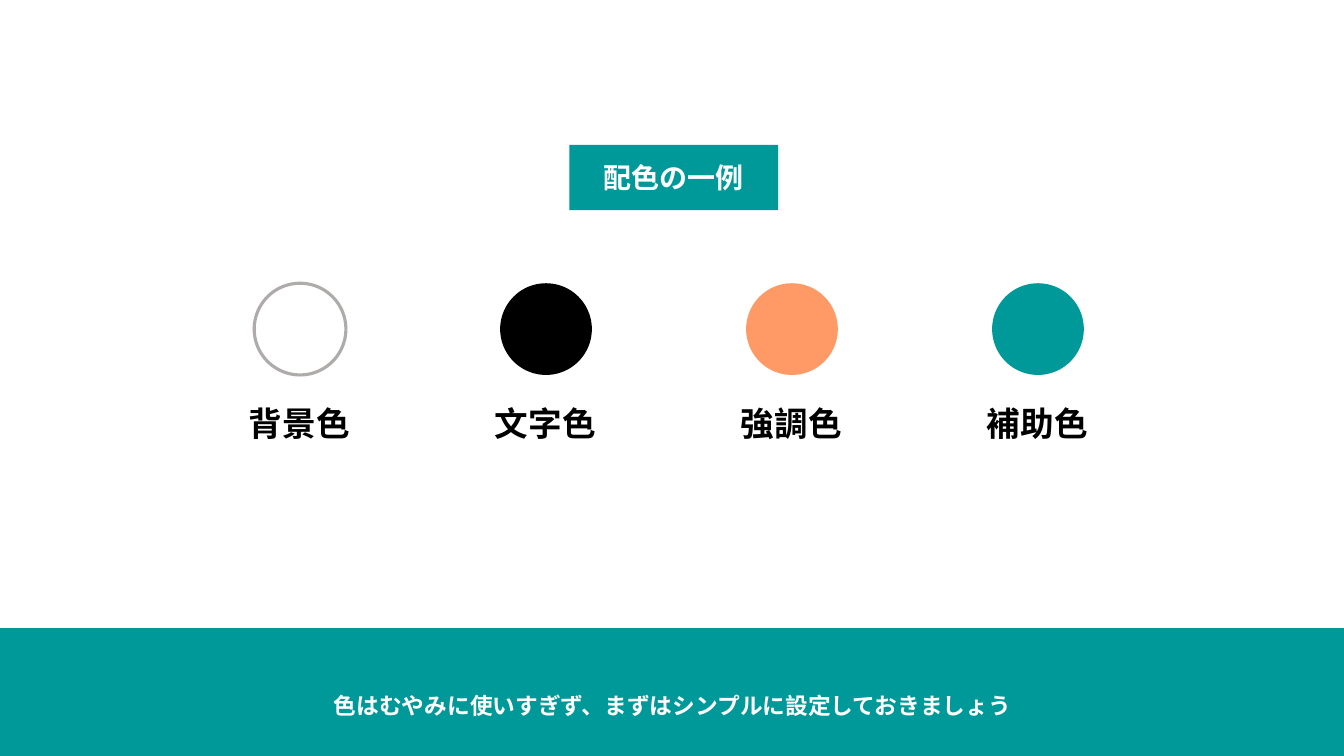
from dataclasses import dataclass

from lxml.etree import SubElement
from pptx import Presentation
from pptx.dml.color import RGBColor
from pptx.enum.shapes import MSO_SHAPE
from pptx.enum.text import MSO_ANCHOR, MSO_AUTO_SIZE, PP_ALIGN
from pptx.oxml.ns import qn
from pptx.shapes.autoshape import Shape
from pptx.slide import Slide
from pptx.util import Pt

FONT = "Noto Sans CJK JP"
COLORS = {
    "white": "FFFFFF",
    "black": "000000",
    "orange": "FF9966",
    "teal": "009999",
    "gray": "AFABAB",
}


@dataclass
class Box:
    left: float
    top: float
    width: float
    height: float


@dataclass
class Swatch:
    label: str
    color: str
    edge: str = ""


SWATCHES = [
    Swatch("背景色", "white", "gray"),
    Swatch("文字色", "black"),
    Swatch("強調色", "orange"),
    Swatch("補助色", "teal"),
]
FIRST = 214.3
PITCH = 175.7
DOT = 65.5
LABEL = 87.1


def rgb(name: str) -> RGBColor:
    return RGBColor.from_string(COLORS[name])


def place(box: Box) -> list[Pt]:
    return [Pt(box.left), Pt(box.top), Pt(box.width), Pt(box.height)]


def add_form(slide: Slide, kind: MSO_SHAPE, box: Box, color: str, edge: str = "") -> Shape:
    form = slide.shapes.add_shape(kind, *place(box))
    form.shadow.inherit = False
    form.fill.solid()
    form.fill.fore_color.rgb = rgb(color)
    if edge:
        form.line.color.rgb = rgb(edge)
        form.line.width = Pt(2.25)
    else:
        form.line.fill.background()
    return form


def write(shape: Shape, text: str, *, size: float, color: str,
          align: PP_ALIGN = PP_ALIGN.LEFT, anchor: MSO_ANCHOR = MSO_ANCHOR.TOP,
          raised: int = 0) -> None:
    frame = shape.text_frame
    frame.vertical_anchor = anchor
    para = frame.paragraphs[0]
    para.alignment = align
    run = para.add_run()
    run.text = text
    font = run.font
    font.size = Pt(size)
    font.bold = True
    font.color.rgb = rgb(color)
    font.name = FONT
    props = run._r.get_or_add_rPr()
    SubElement(props, qn("a:ea"), typeface=FONT)
    if raised:
        props.set("baseline", str(raised * 1000))


def add_text(slide: Slide, box: Box) -> Shape:
    shape = slide.shapes.add_textbox(*place(box))
    shape.text_frame.word_wrap = False
    shape.text_frame.auto_size = MSO_AUTO_SIZE.SHAPE_TO_FIT_TEXT
    return shape


def main() -> None:
    deck = Presentation()
    deck.slide_width = Pt(960)
    deck.slide_height = Pt(540)
    slide = deck.slides.add_slide(deck.slide_layouts[6])

    add_form(slide, MSO_SHAPE.RECTANGLE, Box(0, 448.6, 960, 91.4), "teal")
    note = add_text(slide, Box(190.8, 487.4, 578.9, 30.2))
    write(note, "色はむやみに使いすぎず、まずはシンプルに設定しておきましょう",
          size=28, color="white", align=PP_ALIGN.CENTER, raised=30)

    for index, swatch in enumerate(SWATCHES):
        center = FIRST + index * PITCH
        label = add_text(slide, Box(center - LABEL / 2, 284.4, LABEL, 36))
        write(label, swatch.label, size=24, color="black")
        dot = Box(center - DOT / 2, 202.3, DOT, DOT)
        add_form(slide, MSO_SHAPE.OVAL, dot, swatch.color, swatch.edge)

    title = add_form(slide, MSO_SHAPE.RECTANGLE, Box(406.8, 103.5, 149, 46.6), "teal")
    write(title, "配色の一例", size=20, color="white",
          align=PP_ALIGN.CENTER, anchor=MSO_ANCHOR.MIDDLE)

    deck.save("out.pptx")


if __name__ == "__main__":
    main()
